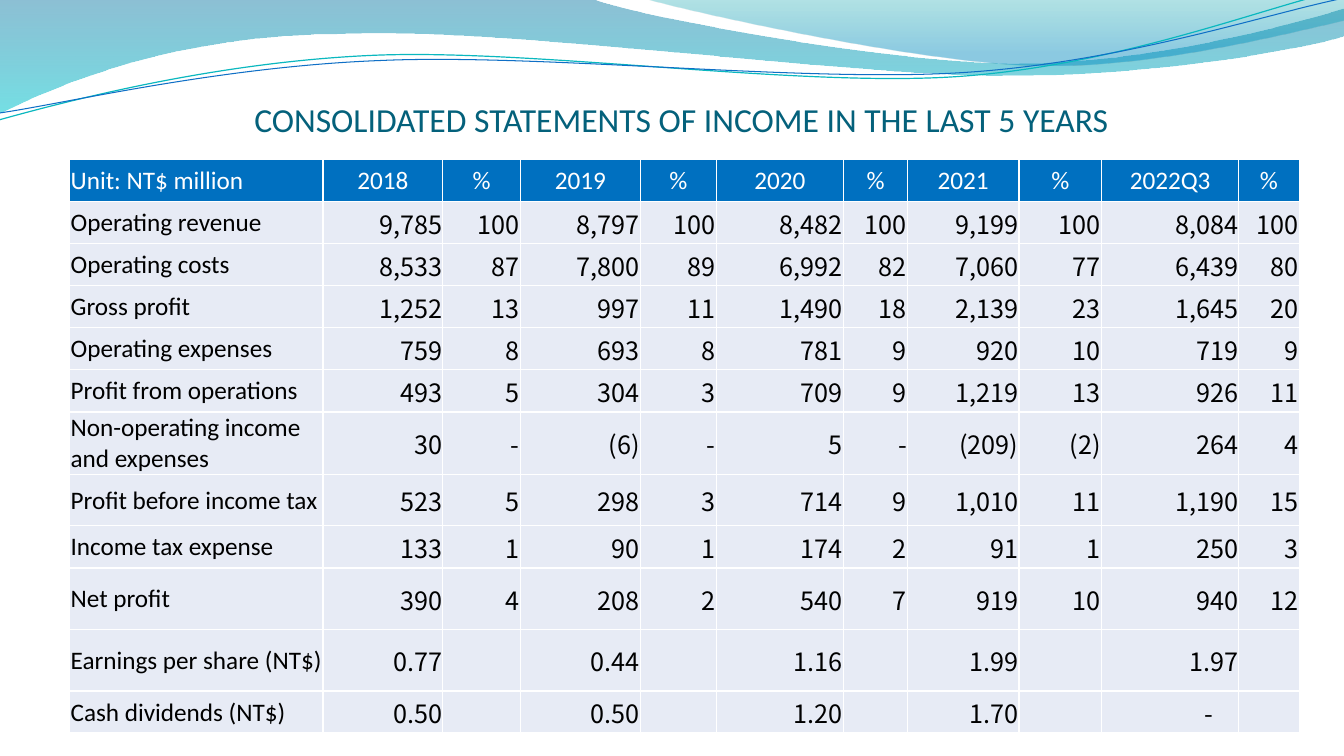
from math import cos, radians, sin

from lxml import etree
from pptx import Presentation
from pptx.dml.color import RGBColor
from pptx.enum.text import MSO_ANCHOR, MSO_AUTO_SIZE, PP_ALIGN
from pptx.oxml.ns import qn
from pptx.util import Cm, Pt

MIDDLE, BOTTOM = MSO_ANCHOR.MIDDLE, MSO_ANCHOR.BOTTOM
LEFT, CENTER, RIGHT = PP_ALIGN.LEFT, PP_ALIGN.CENTER, PP_ALIGN.RIGHT
NO_AUTOFIT = MSO_AUTO_SIZE.NONE

WHITE = RGBColor(0xFF, 0xFF, 0xFF)
BLACK = RGBColor(0x00, 0x00, 0x00)
TITLE_TEAL = RGBColor(0x04, 0x61, 0x7B)
HEADER_BLUE = RGBColor(0x00, 0x70, 0xC0)
BODY_FILL = RGBColor(0xE7, 0xEB, 0xF5)
DEEP_BLUE = RGBColor(0x00, 0x74, 0xA1)
CYAN = RGBColor(0x00, 0xC6, 0xCF)
TEAL = RGBColor(0x00, 0xA1, 0xA9)
SKY = RGBColor(0x00, 0x8B, 0xBF)
LINE_TEAL = RGBColor(0x0A, 0xB8, 0xBF)
LINE_BLUE = RGBColor(0x0F, 0x6F, 0xC6)

LABEL_FONT = "Calibri"
NUMBER_FONT = "Noto Sans CJK SC"
WAVE_UNIT = 2.54
STRAND_TURN = 357.3
STRAND_PIVOT = (6.66, 0.58)

BANDS = [
    ([(0, -0.01), (5.87, -0.01),
      (6.34, 0.17, 8.85, 0.63, 10.11, 0.63), (11.38, 0.63, 12.78, 0.26, 13.33, 0.09),
      (13.35, 0.36),
      (13.11, 0.44, 11.6, 0.76, 9.94, 0.75), (8.29, 0.75, 5.09, 0.28, 3.43, 0.34),
      (1.72, 0.35, 0.61, 0.83, -0.01, 1.13), (0, -0.01)],
     [(0, DEEP_BLUE, 45), (1, CYAN, 55)]),
    ([(6.39, -0.01),
      (6.79, 0.11, 9.09, 0.62, 10.25, 0.65), (11.41, 0.69, 12.82, 0.32, 13.33, 0.21),
      (13.33, 0), (6.39, -0.01)],
     [(0, TEAL, 30), (0.8, SKY, 45)]),
]
STRANDS = [
    ([(-0.01, 1.19), (0.64, 1.01, 2.11, 0.62, 3.69, 0.55),
      (5.27, 0.48, 7.9, 0.87, 9.5, 0.76), (11.1, 0.65, 12.52, 0.08, 13.31, -0.1)],
     LINE_TEAL, 0.85),
    ([(0, 1.12), (0.63, 1.03, 2.18, 0.66, 3.78, 0.6),
      (5.37, 0.53, 7.96, 0.82, 9.55, 0.72), (11.15, 0.62, 12.55, 0.14, 13.34, -0.02)],
     LINE_BLUE, 0.75),
]

COLUMN_WIDTHS = [6.38, 3.02, 1.95, 3.03, 1.91, 3.21, 1.61, 2.81, 2.08, 3.46, 1.52]
ROW_HEIGHTS = [1.06] * 6 + [1.55, 1.3, 1.06, 1.55, 1.55, 1.06]
INCOME = [
    ["Unit: NT$ million", "2018", "%", "2019", "%", "2020", "%", "2021", "%", "2022Q3", "%"],
    ["Operating revenue", "9,785", "100", "8,797", "100", "8,482", "100", "9,199", "100", "8,084", "100"],
    ["Operating costs", "8,533", "87", "7,800", "89", "6,992", "82", "7,060", "77", "6,439", "80"],
    ["Gross profit", "1,252", "13", "997", "11", "1,490", "18", "2,139", "23", "1,645", "20"],
    ["Operating expenses", "759", "8", "693", "8", "781", "9", "920", "10", "719", "9"],
    ["Profit from operations", "493", "5", "304", "3", "709", "9", "1,219", "13", "926", "11"],
    ["Non-operating income and expenses", "30", "-", "(6)", "-", "5", "-", "(209)", "(2)", "264", "4"],
    ["Profit before income tax", "523", "5", "298", "3", "714", "9", "1,010", "11", "1,190", "15"],
    ["Income tax expense", "133", "1", "90", "1", "174", "2", "91", "1", "250", "3"],
    ["Net profit", "390", "4", "208", "2", "540", "7", "919", "10", "940", "12"],
    ["Earnings per share (NT$)", "0.77", "", "0.44", "", "1.16", "", "1.99", "", "1.97", ""],
    ["Cash dividends (NT$)", "0.50", "", "0.50", "", "1.20", "", "1.70", "", "-　", ""],
]


def turn_back(x, y):
    angle = radians(-STRAND_TURN)
    px, py = STRAND_PIVOT
    dx, dy = x - px, y - py
    return px + dx * cos(angle) - dy * sin(angle), py + dx * sin(angle) + dy * cos(angle)


def add_curve(shapes, left, top, segments, close, turned=False):
    steps = []
    for seg in segments:
        pairs = zip(seg[::2], seg[1::2])
        pairs = [turn_back(x, y) if turned else (x, y) for x, y in pairs]
        steps.append([(left + Cm(x * WAVE_UNIT), top + Cm(y * WAVE_UNIT)) for x, y in pairs])
    anchors = [step[-1] for step in steps]
    builder = shapes.build_freeform(*anchors[0])
    builder.add_line_segments(anchors[1:], close=close)
    sp = builder.convert_to_shape()
    for line_to, step in zip(list(sp.element.iter(qn("a:lnTo"))), steps[1:]):
        if len(step) == 3:
            line_to.tag = qn("a:cubicBezTo")
            line_to.clear()
            for x, y in step:
                etree.SubElement(line_to, qn("a:pt"), x=str(x - sp.left), y=str(y - sp.top))
    sp.shadow.inherit = False
    return sp


def add_waves(slide, left, top):
    for segments, stops in BANDS:
        sp = add_curve(slide.shapes, left, top, segments, True)
        sp.line.fill.background()
        sp.fill.gradient()
        sp.fill.gradient_angle = 270
        for stop, (position, color, _) in zip(sp.fill.gradient_stops, stops):
            stop.position = position
            stop.color.rgb = color
        for clr, (_, _, opacity) in zip(sp.element.spPr.iter(qn("a:srgbClr")), stops):
            etree.SubElement(clr, qn("a:alpha"), val=str(opacity * 1000))
    group = slide.shapes.add_group_shape()
    for segments, color, width in STRANDS:
        sp = add_curve(group.shapes, left, top, segments, False, turned=True)
        sp.rotation = STRAND_TURN
        sp.fill.background()
        sp.line.color.rgb = color
        sp.line.width = Pt(width)


def format_run(p, font, size, color):
    for r in p.runs:
        r.font.name = font
        r.font.size = Pt(size)
        r.font.color.rgb = color


def add_title(slide, left, top, width, height):
    title = slide.shapes.title
    title.left, title.top, title.width, title.height = left, top, width, height
    tf = title.text_frame
    tf.text = "CONSOLIDATED STATEMENTS OF INCOME IN THE LAST 5 YEARS"
    tf.word_wrap = True
    tf.auto_size = NO_AUTOFIT
    tf.vertical_anchor = BOTTOM
    tf.margin_left = tf.margin_right = tf.margin_bottom = 0
    tf.margin_top = Cm(0.13)
    p = tf.paragraphs[0]
    p.alignment = CENTER
    format_run(p, LABEL_FONT, 24, TITLE_TEAL)
    slide.shapes.element.append(title.element)


def add_borders(cell):
    tcPr = cell._tc.get_or_add_tcPr()
    for side in ("lnL", "lnR", "lnT", "lnB"):
        ln = etree.SubElement(tcPr, qn("a:" + side), w=str(Pt(1)))
        fill = etree.SubElement(ln, qn("a:solidFill"))
        etree.SubElement(fill, qn("a:srgbClr"), val=str(WHITE))


def add_income_table(slide, left, top):
    frame = slide.shapes.add_table(len(INCOME), len(COLUMN_WIDTHS), left, top,
                                   Cm(sum(COLUMN_WIDTHS)), Cm(sum(ROW_HEIGHTS)))
    table = frame.table
    table.first_row = table.horz_banding = False
    for column, width in zip(table.columns, COLUMN_WIDTHS):
        column.width = Cm(width)
    for row, height in zip(table.rows, ROW_HEIGHTS):
        row.height = Cm(height)
    for i, texts in enumerate(INCOME):
        for j, text in enumerate(texts):
            cell = table.cell(i, j)
            header, label = i == 0, j == 0
            add_borders(cell)
            cell.fill.solid()
            cell.fill.fore_color.rgb = HEADER_BLUE if header else BODY_FILL
            cell.vertical_anchor = MIDDLE
            cell.margin_left = cell.margin_right = cell.margin_top = Cm(0.02)
            cell.margin_bottom = 0
            if not text:
                continue
            p = cell.text_frame.paragraphs[0]
            p.text = text
            p.alignment = LEFT if label else CENTER if header else RIGHT
            format_run(p, LABEL_FONT if header or label else NUMBER_FONT, 18,
                       WHITE if header else BLACK)


def main():
    prs = Presentation()
    prs.slide_width, prs.slide_height = Cm(33.87), Cm(19.05)
    slide = prs.slides.add_slide(prs.slide_layouts[5])
    add_waves(slide, 0, 0)
    add_title(slide, Cm(3.15), Cm(1.73), Cm(28.04), Cm(1.78))
    add_income_table(slide, Cm(1.76), Cm(4.02))
    prs.save("out.pptx")


if __name__ == "__main__":
    main()
